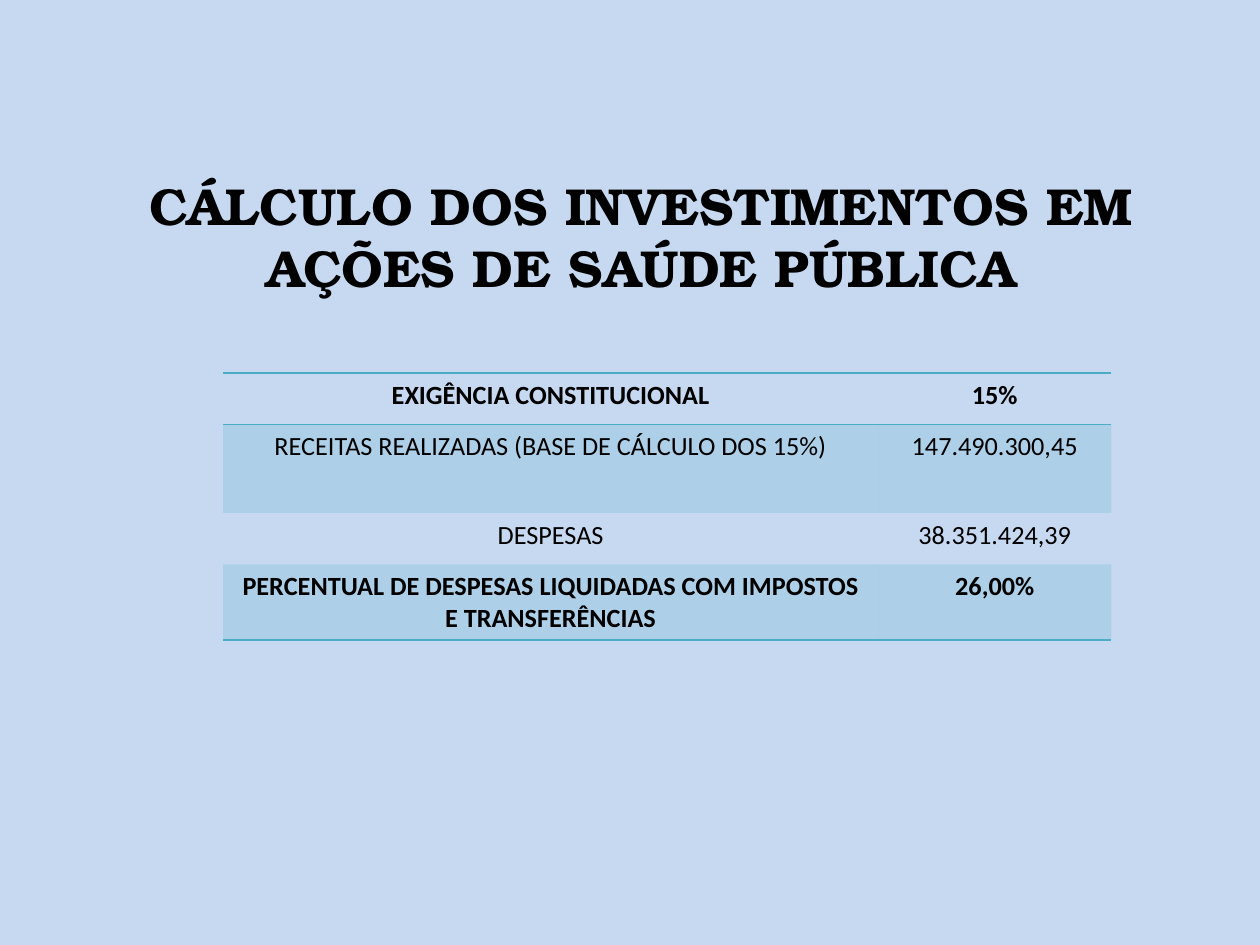
from lxml.etree import SubElement
from pptx import Presentation
from pptx.dml.color import RGBColor
from pptx.enum.text import MSO_ANCHOR, PP_ALIGN
from pptx.oxml import parse_xml
from pptx.oxml.ns import nsdecls, qn
from pptx.util import Inches, Pt

TITLE = "CÁLCULO DOS INVESTIMENTOS EM AÇÕES DE SAÚDE PÚBLICA"
ROWS = [  # label, value, height, bold, shaded, border edges
    ("EXIGÊNCIA CONSTITUCIONAL", "15%", 0.41, True, False, "TB"),
    ("RECEITAS REALIZADAS (BASE DE CÁLCULO DOS 15%)", "147.490.300,45",
     0.7, False, True, ""),
    ("DESPESAS", "38.351.424,39", 0.41, False, False, ""),
    ("PERCENTUAL DE DESPESAS LIQUIDADAS COM IMPOSTOS E TRANSFERÊNCIAS",
     "26,00%", 0.6, True, True, "B"),
]
COLS = (5.2, 1.85)
BACKGROUND, ACCENT, INK = "C6D9F1", "4BACC6", "000000"
TITLE_FONT = dict(name="TeX Gyre Bonum", size=Pt(29.7), bold=True)
CELL_FONT = dict(name="Calibri", size=Pt(15))
NO_STYLE = "{2D5ABB26-0587-4C30-8999-92F81FD0307C}"


def rgb(color):
    return RGBColor.from_string(color)


def write(tf, text, font):
    p = tf.paragraphs[0]
    p.alignment = PP_ALIGN.CENTER
    r = p.add_run()
    r.text = text
    for key, value in font.items():
        setattr(r.font, key, value)
    r.font.color.rgb = rgb(INK)


def shade(cell):
    """Fill the cell with the accent colour at 20% opacity."""
    cell.fill.solid()
    cell.fill.fore_color.rgb = rgb(ACCENT)
    color = cell._tc.tcPr.find(".//" + qn("a:srgbClr"))
    SubElement(color, qn("a:alpha"), val="20000")


def add_borders(cell, edges):
    tcPr = cell._tc.get_or_add_tcPr()
    for i, edge in enumerate(edges):
        tcPr.insert(i, parse_xml(
            f'<a:ln{edge} {nsdecls("a")} w="{Pt(1)}"><a:solidFill>'
            f'<a:srgbClr val="{ACCENT}"/></a:solidFill></a:ln{edge}>'))


prs = Presentation()
prs.slide_width, prs.slide_height = Inches(10), Inches(7.5)
s = prs.slides.add_slide(prs.slide_layouts[6])
s.background.fill.solid()
s.background.fill.fore_color.rgb = rgb(BACKGROUND)

title = s.shapes.add_textbox(Inches(0.59), Inches(1.12), Inches(9), Inches(1.5))
tf = title.text_frame
tf.word_wrap = True
tf.vertical_anchor = MSO_ANCHOR.MIDDLE
write(tf, TITLE, TITLE_FONT)

height = sum(row[2] for row in ROWS)
table = s.shapes.add_table(len(ROWS), len(COLS), Inches(1.77), Inches(2.96),
                           Inches(sum(COLS)), Inches(height)).table
table._tbl.tblPr.find(qn("a:tableStyleId")).text = NO_STYLE
for col, width in zip(table.columns, COLS):
    col.width = Inches(width)
for row, (label, value, row_height, bold, shaded, edges) in zip(table.rows, ROWS):
    row.height = Inches(row_height)
    for cell, text in zip(row.cells, (label, value)):
        write(cell.text_frame, text, CELL_FONT | {"bold": bold})
        if shaded:
            shade(cell)
        else:
            cell.fill.background()
        add_borders(cell, edges)

prs.save("out.pptx")
